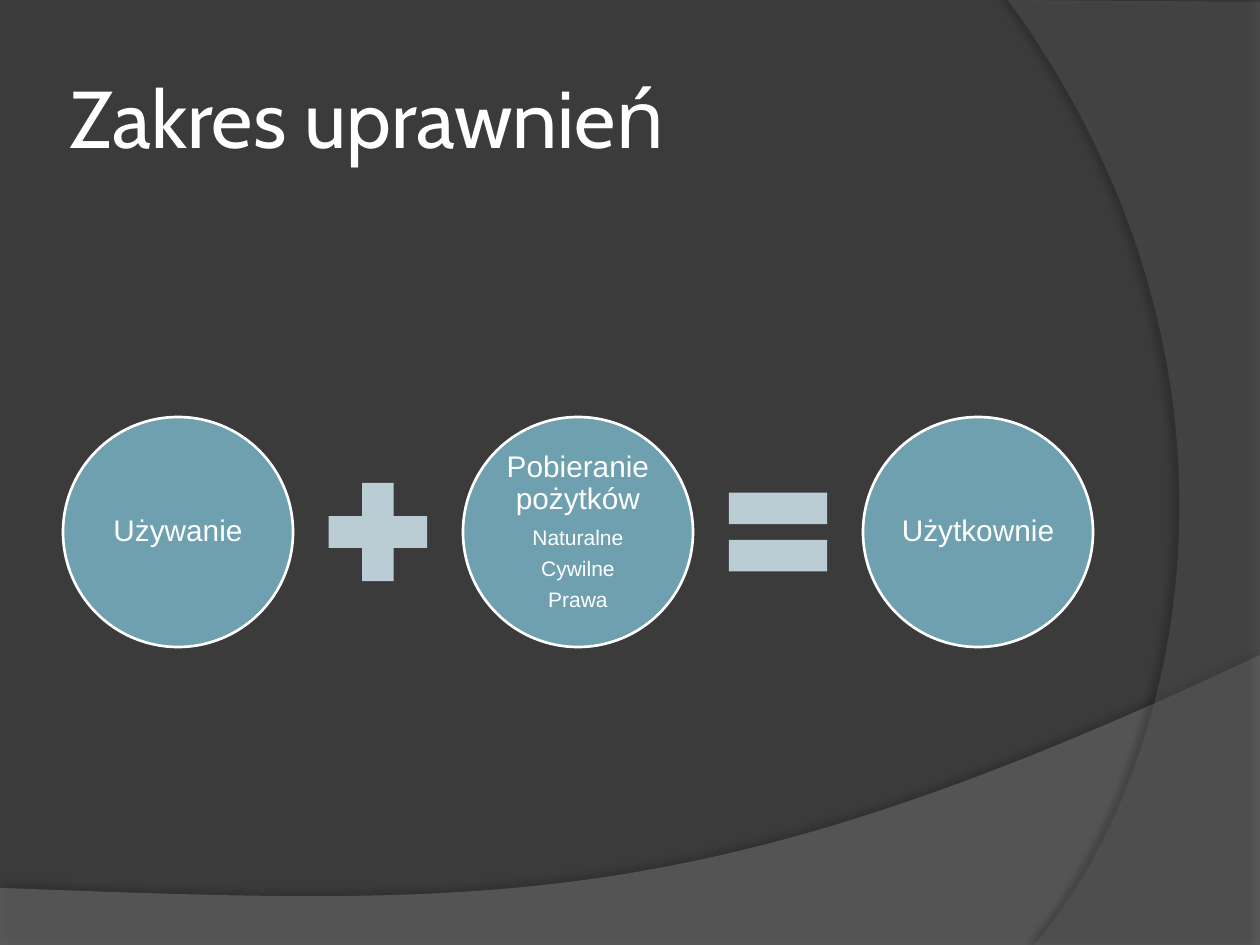
"""Build the slide on the scope of rights as an equation of circles."""
from dataclasses import dataclass

from lxml import etree
from pptx import Presentation
from pptx.dml.color import RGBColor
from pptx.enum.shapes import MSO_SHAPE
from pptx.enum.text import MSO_ANCHOR, PP_ALIGN
from pptx.oxml.ns import qn
from pptx.util import Emu, Inches, Pt

OVAL, PLUS, EQUAL = MSO_SHAPE.OVAL, MSO_SHAPE.MATH_PLUS, MSO_SHAPE.MATH_EQUAL
MIDDLE = MSO_ANCHOR.MIDDLE
LEFT, CENTER = PP_ALIGN.LEFT, PP_ALIGN.CENTER

BACKGROUND = RGBColor(0x3B, 0x3B, 0x3B)
WAVE_GREY = RGBColor(0x7F, 0x7F, 0x7F)
ARC_GREY = RGBColor(0x5E, 0x5E, 0x5E)
WHITE = RGBColor(0xFF, 0xFF, 0xFF)
TEAL = RGBColor(0x6E, 0xA0, 0xB0)
PALE_TEAL = RGBColor(0xBA, 0xCD, 0xD4)

EMU_PER_PX = 914400 / 126
WIDTH, HEIGHT = 1260, 945
CIRCLE_LEFT, CIRCLE_TOP, CIRCLE_SIZE = 63, 417, 230
SIGN_LEFT, SIGN_TOP, SIGN_SIZE = 311, 465, 134
PITCH = 400
CURVE_STEPS = 60

Point = tuple[float, float]


@dataclass(frozen=True)
class Swoosh:
    """A translucent area: corners, then a cubic curve from the last corner."""
    corners: list[Point]
    curve: list[Point]
    color: RGBColor
    opacity: int
    shadow_opacity: int
    shadow_distance: float
    shadow_angle: int


@dataclass(frozen=True)
class Term:
    """A circle of the equation with its heading and details."""
    heading: str
    details: tuple[str, ...] = ()


SWOOSHES = [
    Swoosh([(0, 888), (0, HEIGHT), (WIDTH, HEIGHT), (WIDTH, 655)],
           [(704, 918), (493, 906), (0, 888)], WAVE_GREY, 45, 35, 3.5, 270),
    Swoosh([(WIDTH, 2), (WIDTH, HEIGHT), (1034, HEIGHT)],
           [(1178, 780), (1283, 378), (1008, 0)], ARC_GREY, 40, 45, 4, 180),
]
TERMS = [
    Term("Używanie"),
    Term("Pobieranie pożytków", ("Naturalne", "Cywilne", "Prawa")),
    Term("Użytkownie"),
]
SIGNS = [PLUS, EQUAL]


def px(value: float) -> Emu:
    """Turn pixels into EMU."""
    return Emu(round(value * EMU_PER_PX))


def bezier(points: list[Point]) -> list[Point]:
    """Return points along a cubic curve, without its start."""
    result = []
    for step in range(1, CURVE_STEPS + 1):
        t = step / CURVE_STEPS
        u = 1 - t
        weights = (u**3, 3 * u * u * t, 3 * u * t * t, t**3)
        result.append((sum(w * x for w, (x, _) in zip(weights, points)),
                       sum(w * y for w, (_, y) in zip(weights, points))))
    return result


def add_alpha(color, percent: int) -> None:
    """Give a colour element an opacity."""
    etree.SubElement(color, qn("a:alpha"), val=str(percent * 1000))


def draw_swoosh(s, swoosh: Swoosh, position: int) -> None:
    """Draw a translucent area with a soft shadow behind the title."""
    outline = swoosh.corners + bezier([swoosh.corners[-1], *swoosh.curve])
    start, *rest = [(px(x), px(y)) for x, y in outline]
    builder = s.shapes.build_freeform(*start)
    builder.add_line_segments(rest, close=True)
    sp = builder.convert_to_shape()
    sp.fill.solid()
    sp.fill.fore_color.rgb = swoosh.color
    sp.line.fill.background()
    sp.shadow.inherit = False
    properties = sp.element.spPr
    add_alpha(properties.find(f"{qn('a:solidFill')}/{qn('a:srgbClr')}"), swoosh.opacity)
    shadow = etree.SubElement(
        properties.find(qn("a:effectLst")), qn("a:outerShdw"),
        blurRad=str(Pt(4)), dist=str(Pt(swoosh.shadow_distance)),
        dir=str(swoosh.shadow_angle * 60000), algn="ctr", rotWithShape="0")
    add_alpha(etree.SubElement(shadow, qn("a:srgbClr"), val="000000"), swoosh.shadow_opacity)
    s.shapes.element.insert(position, sp.element)


def draw_shape(s, kind: MSO_SHAPE, left: int, top: int, size: int, color: RGBColor):
    """Draw a square-sized preset shape with a plain fill and no line."""
    sp = s.shapes.add_shape(kind, px(left), px(top), px(size), px(size))
    sp.fill.solid()
    sp.fill.fore_color.rgb = color
    sp.line.fill.background()
    sp.shadow.inherit = False
    return sp


def set_margins(tf, inches: float) -> None:
    """Set equal margins and centre the text vertically."""
    tf.margin_left = tf.margin_right = tf.margin_top = tf.margin_bottom = Inches(inches)
    tf.vertical_anchor = MIDDLE
    tf.word_wrap = True


def format_text(p, font: str, size: int, align: PP_ALIGN) -> None:
    """Format a paragraph in white."""
    p.alignment = align
    for r in p.runs:
        r.font.name = font
        r.font.size = Pt(size)
        r.font.color.rgb = WHITE


def draw_term(s, term: Term, left: int) -> None:
    """Draw a circle with its text."""
    sp = draw_shape(s, OVAL, left, CIRCLE_TOP, CIRCLE_SIZE, TEAL)
    sp.line.color.rgb = WHITE
    sp.line.width = Pt(1.5)
    tf = sp.text_frame
    set_margins(tf, 0.02)
    tf.text = "\n".join((term.heading, *term.details))
    for index, p in enumerate(tf.paragraphs):
        size = 12 if index else 17
        format_text(p, "Arial", size, CENTER)
        p.line_spacing = 0.9
        p.space_after = Pt(round(size * 0.4, 1))


def draw_title(s, text: str) -> None:
    """Place and format the title."""
    title = s.shapes.title
    title.left, title.top, title.width, title.height = px(63), px(38), px(1029), px(157)
    tf = title.text_frame
    tf.text = text
    set_margins(tf, 0.05)
    format_text(tf.paragraphs[0], "Cabin", 46, LEFT)


def main() -> None:
    """Build and save the slide."""
    prs = Presentation()
    prs.slide_width, prs.slide_height = px(WIDTH), px(HEIGHT)
    s = prs.slides.add_slide(prs.slide_layouts[5])
    s.background.fill.solid()
    s.background.fill.fore_color.rgb = BACKGROUND
    for position, swoosh in enumerate(SWOOSHES, start=2):
        draw_swoosh(s, swoosh, position)
    draw_title(s, "Zakres uprawnień")
    for index, term in enumerate(TERMS):
        draw_term(s, term, CIRCLE_LEFT + index * PITCH)
        if index < len(SIGNS):
            draw_shape(s, SIGNS[index], SIGN_LEFT + index * PITCH, SIGN_TOP, SIGN_SIZE, PALE_TEAL)
    prs.save("out.pptx")


if __name__ == "__main__":
    main()
